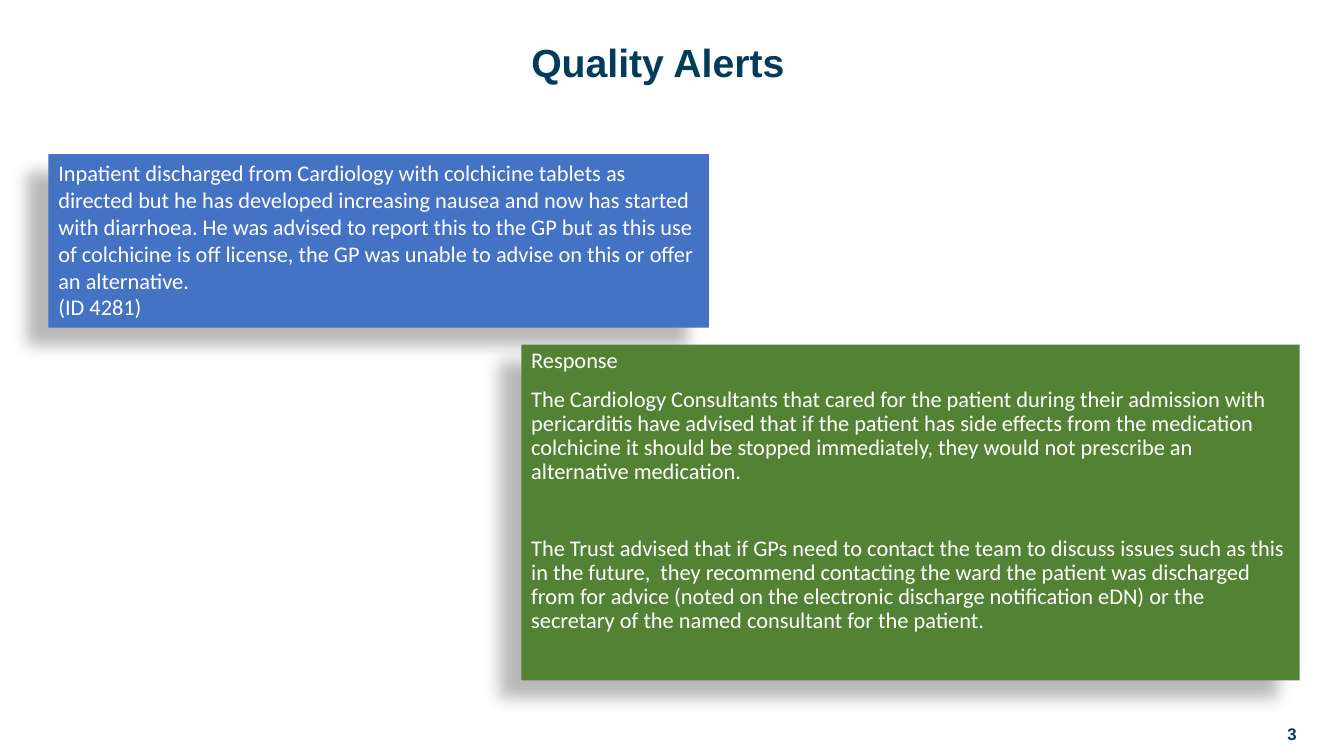
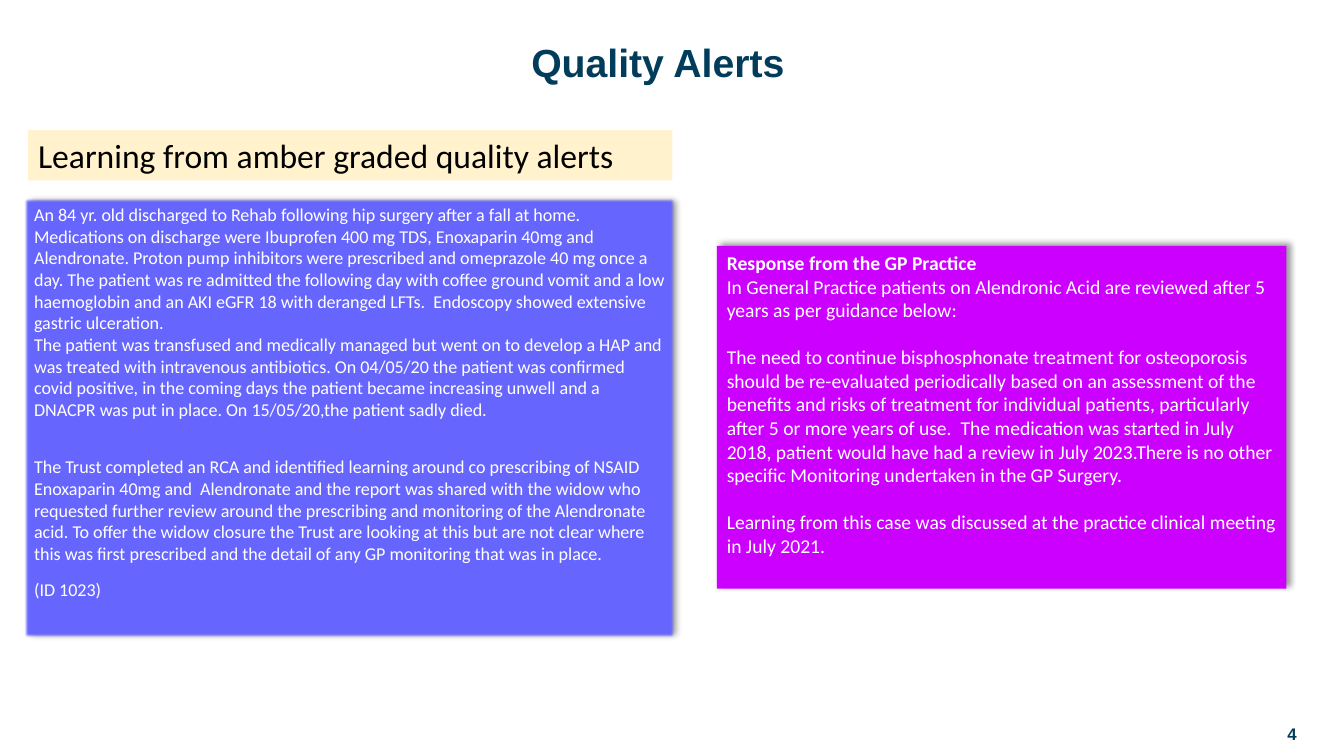
import pptx
import pptx.util
import pptx.dml.color
import pptx.enum.shapes
import pptx.enum.text
import pptx.oxml
import pptx.oxml.ns

WIDTH, HEIGHT = 13.33, 7.5
NAVY, WHITE, BLACK = "013C5B", "FFFFFF", "000000"
TITLE = "Quality Alerts"
TITLE_AREA = (2.41, 0.28, 8.23, 0.72)
NUMBER_AREA = (11.11, 7.08, 1.85, 0.4)
ALIGN = pptx.enum.text.PP_ALIGN
ANCHOR = pptx.enum.text.MSO_ANCHOR

DEEP = dict(alpha=28, blur=11.8, distance=19.7)
SLIGHT = dict(alpha=40, blur=4, distance=3)

SLIDES = [
    dict(number="3", panels=[
        dict(area=(0.48, 1.53, 6.55, 1.72), fill="4472C4",
             shadow=dict(DEEP, angle=141), style=dict(size=16),
             lines=[
                 ("Inpatient discharged from Cardiology with colchicine tablets as directed but he has developed increasing nausea and now has started with diarrhoea. He was advised to report this to the GP but as this use of colchicine is off license, the GP was unable to advise on this or offer an alternative.", {}),
                 ("(ID 4281)", {}),
             ]),
        dict(area=(5.17, 3.42, 7.72, 3.33), fill="548235",
             shadow=dict(DEEP, angle=141), style=dict(size=16, spacing=0.9),
             lines=[
                 ("Response", {}),
                 ("The Cardiology Consultants that cared for the patient during their admission with pericarditis have advised that if the patient has side effects from the medication colchicine it should be stopped immediately, they would not prescribe an alternative medication.", dict(before=10)),
                 ("The Trust advised that if GPs need to contact the team to discuss issues such as this in the future,  they recommend contacting the ward the patient was discharged from for advice (noted on the electronic discharge notification eDN) or the secretary of the named consultant for the patient.", dict(before=37.5)),
             ]),
    ]),
    dict(number="4", panels=[
        dict(area=(0.24, 1.97, 6.45, 4.36), fill="6666FF",
             shadow=dict(SLIGHT, angle=0, soft=1), style=dict(size=12.9),
             lines=[
                 ("An 84 yr. old discharged to Rehab following hip surgery after a fall at home. Medications on discharge were Ibuprofen 400 mg TDS, Enoxaparin 40mg and Alendronate. Proton pump inhibitors were prescribed and omeprazole 40 mg once a day. The patient was re admitted the following day with coffee ground vomit and a low haemoglobin and an AKI eGFR 18 with deranged LFTs.  Endoscopy showed extensive gastric ulceration.", {}),
                 ("The patient was transfused and medically managed but went on to develop a HAP and was treated with intravenous antibiotics. On 04/05/20 the patient was confirmed covid positive, in the coming days the patient became increasing unwell and a DNACPR was put in place. On 15/05/20,the patient sadly died.", {}),
                 ("The Trust completed an RCA and identified learning around co prescribing of NSAID Enoxaparin 40mg and  Alendronate and the report was shared with the widow who requested further review around the prescribing and monitoring of the Alendronate acid. To offer the widow closure the Trust are looking at this but are not clear where this was first prescribed and the detail of any GP monitoring that was in place.", dict(before=25.5)),
                 ("(ID 1023)", dict(before=10)),
             ]),
        dict(area=(7.11, 2.44, 5.65, 3.4), fill="CC00FF",
             shadow=dict(SLIGHT, angle=315), style=dict(size=14),
             lines=[
                 ("Response from the GP Practice", dict(bold=True)),
                 ("In General Practice patients on Alendronic Acid are reviewed after 5 years as per guidance below:", {}),
                 ("The need to continue bisphosphonate treatment for osteoporosis should be re-evaluated periodically based on an assessment of the benefits and risks of treatment for individual patients, particularly after 5 or more years of use.  The medication was started in July 2018, patient would have had a review in July 2023.There is no other specific Monitoring undertaken in the GP Surgery.", dict(before=17)),
                 ("Learning from this case was discussed at the practice clinical meeting in July 2021.", dict(before=17)),
             ]),
        dict(area=(0.28, 1.29, 6.39, 0.5), fill="FFF2CC", shadow=None,
             style=dict(size=24, color=BLACK),
             lines=[("Learning from amber graded quality alerts", {})]),
    ]),
]


def rgb(value):
    return pptx.dml.color.RGBColor.from_string(value)


def inches(area):
    return [pptx.util.Inches(length) for length in area]


def write(frame, text, size=16, font="Calibri", color=WHITE, bold=False,
          align=ALIGN.LEFT, spacing=1.0, before=0):
    para = frame.paragraphs[0]
    if para.runs:
        para = frame.add_paragraph()
    para.alignment = align
    para.line_spacing = spacing
    para.space_before = pptx.util.Pt(before)
    span = para.add_run()
    span.text = text
    span.font.size = pptx.util.Pt(size)
    span.font.name = font
    span.font.bold = bold
    span.font.color.rgb = rgb(color)


def set_frame(box, anchor):
    frame = box.text_frame
    frame.word_wrap = True
    frame.auto_size = pptx.enum.text.MSO_AUTO_SIZE.NONE
    frame.vertical_anchor = anchor
    return frame


def add_shadow(box, alpha, blur, distance, angle, soft=0):
    effects = box._element.spPr.find(pptx.oxml.ns.qn("a:effectLst"))
    effects.append(pptx.oxml.parse_xml(
        f'<a:outerShdw {pptx.oxml.ns.nsdecls("a")} blurRad="{pptx.util.Pt(blur)}" '
        f'dist="{pptx.util.Pt(distance)}" dir="{angle * 60000}" algn="ctr" rotWithShape="0">'
        f'<a:srgbClr val="{BLACK}"><a:alpha val="{alpha * 1000}"/></a:srgbClr></a:outerShdw>'))
    if soft:
        effects.append(pptx.oxml.parse_xml(
            f'<a:softEdge {pptx.oxml.ns.nsdecls("a")} rad="{pptx.util.Pt(soft)}"/>'))


def add_panel(page, area, fill, shadow, style, lines):
    box = page.shapes.add_shape(pptx.enum.shapes.MSO_SHAPE.RECTANGLE, *inches(area))
    box.fill.solid()
    box.fill.fore_color.rgb = rgb(fill)
    box.line.fill.background()
    box.shadow.inherit = False
    if shadow:
        add_shadow(box, **shadow)
    frame = set_frame(box, ANCHOR.TOP)
    for text, extra in lines:
        write(frame, text, **{**style, **extra})


def add_page(deck, number, panels):
    page = deck.slides.add_slide(deck.slide_layouts[5])
    heading = dict(font="Arial", color=NAVY, bold=True)
    title = page.shapes.title
    title.left, title.top, title.width, title.height = inches(TITLE_AREA)
    write(set_frame(title, ANCHOR.MIDDLE), TITLE, size=28, align=ALIGN.CENTER,
          spacing=0.9, **heading)
    footer = page.shapes.add_textbox(*inches(NUMBER_AREA))
    write(set_frame(footer, ANCHOR.MIDDLE), number, size=12, align=ALIGN.RIGHT, **heading)
    for panel in panels:
        add_panel(page, **panel)


def main():
    deck = pptx.Presentation()
    deck.slide_width, deck.slide_height = inches((WIDTH, HEIGHT))
    for content in SLIDES:
        add_page(deck, **content)
    deck.save("out.pptx")


if __name__ == "__main__":
    main()
